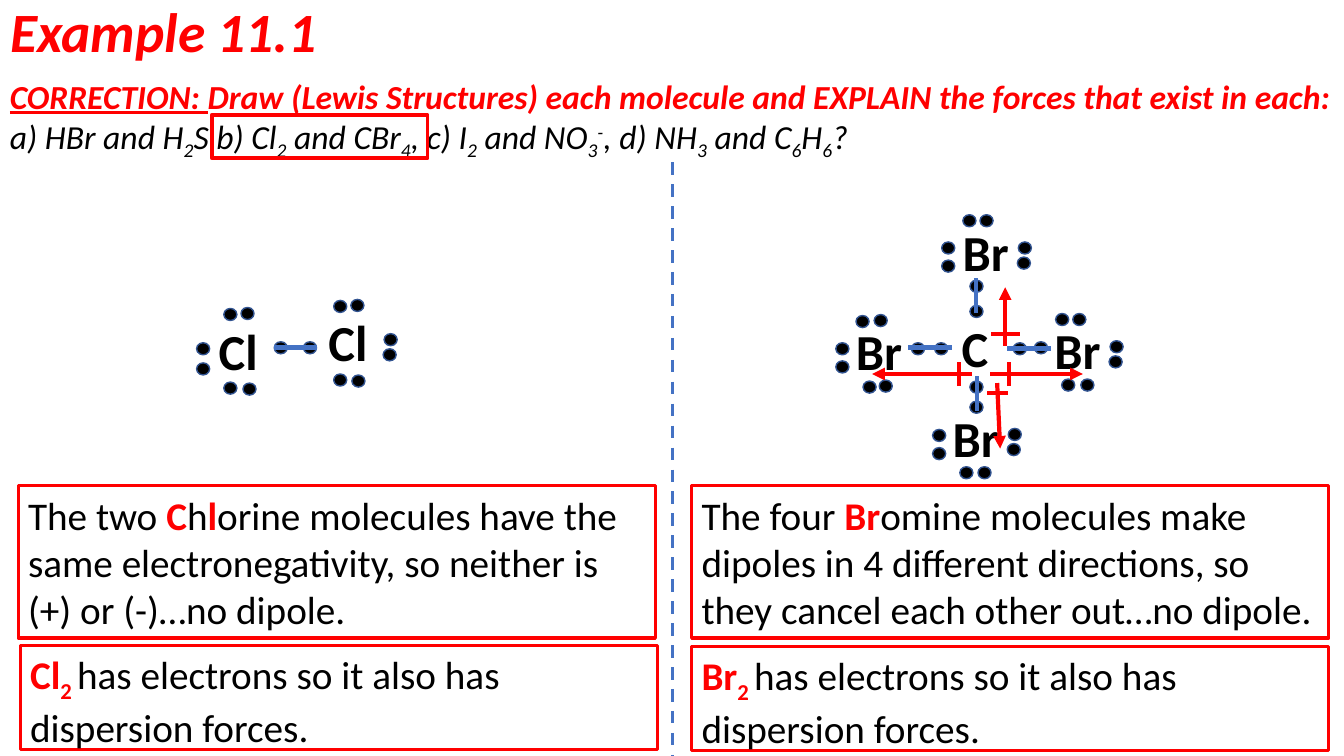
"""Build the Example 11.1 slide on the forces in chlorine and carbon tetrabromide."""
from lxml import etree
from pptx import Presentation
from pptx.dml.color import RGBColor
from pptx.enum import dml, shapes, text
from pptx.oxml import ns
from pptx.util import Inches, Pt

COLORS = {"red": "FF0000", "black": "000000", "bond": "4472C4", "dot_edge": "325491"}
FONT = "Calibri"
STYLES = {
    "plain": {"color": "black"},
    "atom": {"color": "black", "bold": True},
    "key": {"color": "red", "bold": True},
    "key_sub": {"color": "red", "bold": True, "baseline": -25},
    "title": {"color": "red", "bold": True, "italic": True},
    "label": {"color": "red", "bold": True, "italic": True, "underline": True},
    "formula": {"color": "black", "italic": True},
    "sub": {"color": "black", "italic": True, "baseline": -25},
    "super": {"color": "black", "italic": True, "baseline": 30},
}

TITLE = [[("Example 11.1", "title")]]
QUESTION = [
    [("CORRECTION: ", "label"),
     ("Draw (Lewis Structures) each molecule and EXPLAIN the forces that exist in each:", "title")],
    [("a) HBr and H", "formula"), ("2", "sub"), ("S b) Cl", "formula"), ("2", "sub"),
     (" and CBr", "formula"), ("4", "sub"), (", c) I", "formula"), ("2", "sub"),
     (" and NO", "formula"), ("3", "sub"), ("-", "super"), (", d) NH", "formula"), ("3", "sub"),
     (" and C", "formula"), ("6", "sub"), ("H", "formula"), ("6", "sub"), ("?", "formula")],
]
DISPERSION = "has electrons so it also has dispersion forces."
ANSWERS = [
    ((0.18, 4.82, 6.32, 1.51),
     [("The two", "plain"), (" C", "key"), ("h", "plain"), ("l", "key"),
      ("orine molecules have the same electronegativity, so neither is (+) or (-)…no dipole.", "plain")]),
    ((0.2, 6.4, 6.32, 1.04), [("Cl", "key"), ("2 ", "key_sub"), (DISPERSION, "plain")]),
    ((6.86, 4.82, 6.32, 1.51),
     [("The four", "plain"), (" Br", "key"),
      ("omine molecules make dipoles in 4 different directions, so they cancel each other out…no dipole.",
       "plain")]),
    ((6.86, 6.41, 6.32, 1.04), [("Br", "key"), ("2 ", "key_sub"), (DISPERSION, "plain")]),
]
ATOMS = [
    ("Cl", 3.16, 3.04, [(3.81, 3.31), (3.48, 2.97), (3.31, 3.71), (3.49, 3.72),
                        (3.8, 3.46), (3.31, 2.98), (3.01, 3.39)]),
    ("Cl", 2.07, 3.13, [(2.72, 3.39), (2.39, 3.05), (2.22, 3.79), (2.41, 3.8),
                        (1.95, 3.6), (2.22, 3.06), (1.95, 3.4)]),
    ("C", 9.44, 3.1, [(10.05, 3.4), (9.62, 3.78), (9.27, 3.4), (9.62, 3.03)]),
    ("Br", 9.45, 2.14, [(10.1, 2.4), (9.72, 2.13), (9.34, 2.4), (9.34, 2.58),
                        (10.09, 2.55), (9.55, 2.13), (9.62, 2.78)]),
    ("Br", 10.36, 3.12, [(11.01, 3.38), (10.64, 3.11), (10.26, 3.39), (10.72, 3.76),
                         (11, 3.53), (10.47, 3.11), (10.53, 3.76)]),
    ("Br", 9.35, 3.99, [(10, 4.25), (9.62, 3.98), (9.25, 4.26), (9.25, 4.44),
                        (9.99, 4.4), (9.7, 4.63), (9.52, 4.63)]),
    ("Br", 8.39, 3.13, [(9.04, 3.4), (8.67, 3.12), (8.29, 3.4), (8.29, 3.58),
                        (8.72, 3.77), (8.49, 3.13), (8.56, 3.78)]),
]
BONDS = [(2.72, 3.45, 3.14, 3.45), (9.99, 3.46, 10.42, 3.46), (9.01, 3.45, 9.44, 3.45),
         (9.68, 3.11, 9.68, 2.76), (9.69, 4.08, 9.69, 3.73)]
DIPOLES = [
    ((9.82, 3.71, 10.74, 3.71), (10.01, 3.83, 10.01, 3.59)),
    ((9.64, 3.71, 8.65, 3.71), (9.51, 3.83, 9.51, 3.59)),
    ((9.89, 3.8, 9.92, 4.45), (9.79, 3.9, 10, 3.9)),
    ((9.97, 3.43, 9.97, 2.85), (9.83, 3.31, 10.12, 3.31)),
]
DIVIDER = (6.67, 1.61, 6.67, 7.5)
HIGHLIGHT = (2.1, 1.14, 2.14, 0.43)
DOT_SIZE = (0.13, 0.12)
ATOM_SIZE = (0.74, 0.71)


def rgb(name):
    return RGBColor.from_string(COLORS[name])


def write(frame, paragraphs, size):
    frame.word_wrap = True
    for index, runs in enumerate(paragraphs):
        para = frame.paragraphs[0] if index == 0 else frame.add_paragraph()
        para.alignment = text.PP_ALIGN.LEFT
        for words, style_name in runs:
            style = STYLES[style_name]
            span = para.add_run()
            span.text = words
            font = span.font
            font.name, font.size, font.color.rgb = FONT, Pt(size), rgb(style["color"])
            font.bold = style.get("bold", False)
            font.italic = style.get("italic", False)
            font.underline = style.get("underline", False)
            if "baseline" in style:
                span._r.get_or_add_rPr().set("baseline", str(style["baseline"] * 1000))


def add_text(page, place, paragraphs, size):
    box = page.shapes.add_textbox(*map(Inches, place))
    write(box.text_frame, paragraphs, size)
    box.text_frame.auto_size = text.MSO_AUTO_SIZE.SHAPE_TO_FIT_TEXT


def add_outline(page, kind, place, color, width, fill=None):
    shape = page.shapes.add_shape(kind, *map(Inches, place))
    shape.shadow.inherit = False
    shape.line.color.rgb, shape.line.width = rgb(color), Pt(width)
    if fill:
        shape.fill.solid()
        shape.fill.fore_color.rgb = rgb(fill)
    else:
        shape.fill.background()
    return shape


def add_line(page, ends, color, width, arrow=False):
    line = page.shapes.add_connector(shapes.MSO_CONNECTOR.STRAIGHT, *map(Inches, ends))
    line.line.color.rgb, line.line.width = rgb(color), Pt(width)
    if arrow:
        etree.SubElement(line.line._get_or_add_ln(), ns.qn("a:tailEnd"), type="triangle")
    etree.SubElement(line._element.spPr, ns.qn("a:effectLst"))
    return line


def main():
    deck = Presentation()
    deck.slide_width, deck.slide_height = Inches(13.33), Inches(7.5)
    page = deck.slides.add_slide(deck.slide_layouts[5])

    title = page.shapes.title
    title.left, title.top, title.width, title.height = map(Inches, (0, -0.01, 11.5, 0.71))
    write(title.text_frame, TITLE, 39.6)
    title.text_frame.vertical_anchor = text.MSO_ANCHOR.MIDDLE
    title.text_frame.paragraphs[0].line_spacing = 0.9

    add_text(page, (0, 0.7, 13.33, 0.91), QUESTION, 24)
    add_outline(page, shapes.MSO_SHAPE.RECTANGLE, HIGHLIGHT, "red", 2.75)
    divider = add_line(page, DIVIDER, "bond", 2.25)
    divider.line.dash_style = dml.MSO_LINE.DASH

    for symbol, left, top, dots in ATOMS:
        add_text(page, (left, top, *ATOM_SIZE), [[(symbol, "atom")]], 36)
        for dot in dots:
            add_outline(page, shapes.MSO_SHAPE.OVAL, (*dot, *DOT_SIZE), "dot_edge", 1, "black")
    for bond in BONDS:
        add_line(page, bond, "bond", 3.25)
    for arrow, tick in DIPOLES:
        add_line(page, arrow, "red", 3, arrow=True)
        add_line(page, tick, "red", 3)

    for place, runs in ANSWERS:
        box = add_outline(page, shapes.MSO_SHAPE.RECTANGLE, place, "red", 2.25)
        write(box.text_frame, [runs], 28)
        box.text_frame.vertical_anchor = text.MSO_ANCHOR.TOP
        box.text_frame.auto_size = text.MSO_AUTO_SIZE.SHAPE_TO_FIT_TEXT

    deck.save("out.pptx")


if __name__ == "__main__":
    main()
